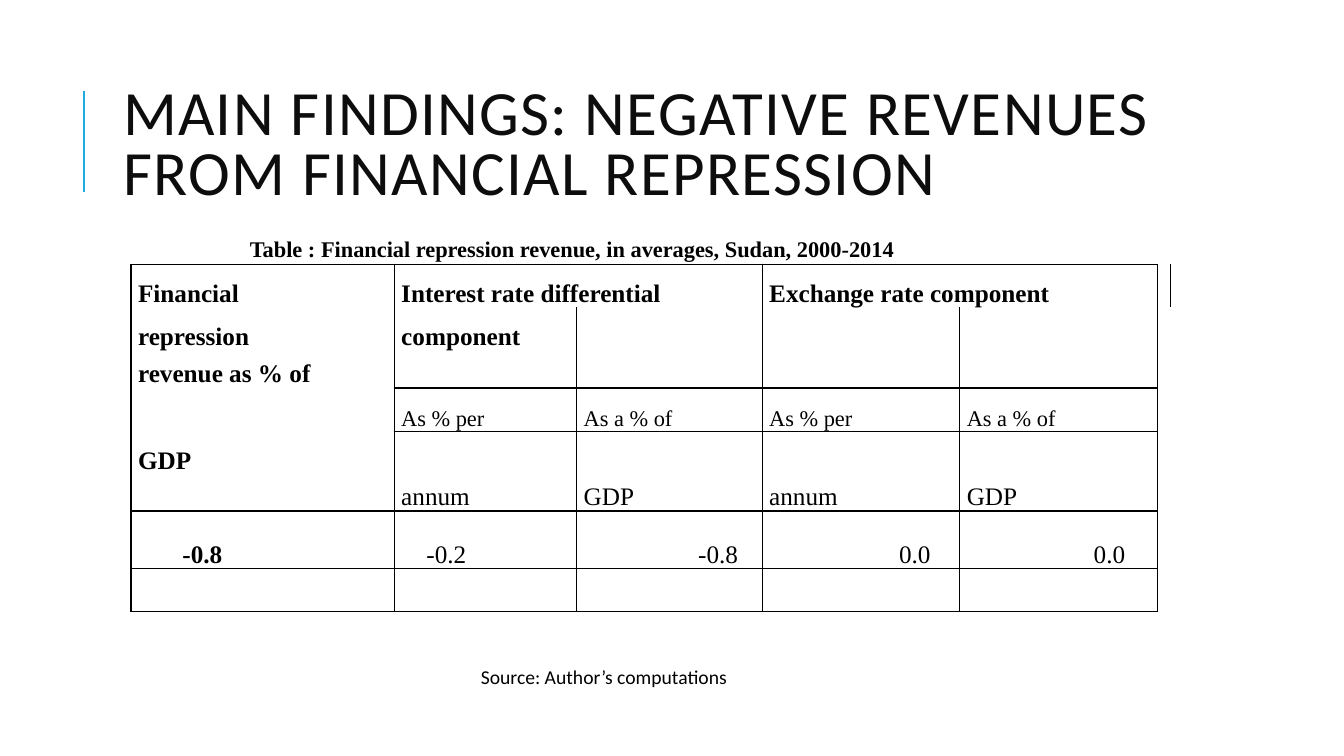
from collections import defaultdict

from lxml.etree import SubElement
from pptx import Presentation
from pptx.dml.color import RGBColor
from pptx.enum.shapes import MSO_CONNECTOR
from pptx.enum.text import MSO_ANCHOR, MSO_AUTO_SIZE, PP_ALIGN
from pptx.oxml import parse_xml
from pptx.oxml.ns import nsdecls, qn
from pptx.util import Pt

SCALE = 9144  # EMU in one px, at 100 px to the inch
NO_GRID_STYLE = "{2D5ABB26-0587-4C30-8999-92F81FD0307C}"
BLACK = "000000"
SERIF = {"name": "Times New Roman", "size": Pt(18)}

COLUMN_WIDTHS = [261, 181, 184, 196, 196, 13]
ROW_HEIGHTS = [43, 43, 37, 43, 43, 36, 57, 43, 43]

# First row, first column, last row, last column
MERGES = [(0, 1, 0, 2), (0, 3, 0, 4), (3, 0, 4, 0), (8, 1, 8, 3)]
MERGES += [(4, column, 5, column) for column in range(1, 5)]
OUTLINES = [(0, 0, 5, 0), (0, 1, 2, 2), (0, 3, 2, 4)]
OUTLINES += [(3, column, 5, column) for column in range(1, 5)]
OUTLINES += [(6, column, 7, column) for column in range(5)]

# Row, column, text, line spacing in points
HEADINGS = [
    (0, 0, "Financial", 11.4),
    (1, 0, "repression", 11.3),
    (2, 0, "revenue as % of", 10.5),
    (3, 0, "GDP", 11.4),
    (0, 1, "Interest rate differential", 11.4),
    (1, 1, "component", 11.3),
    (0, 3, "Exchange rate component", 11.4),
]
SUBHEADINGS = [("As % per", "annum"), ("As a % of", "GDP")] * 2
# Text, alignment, distance from that side of the cell
VALUES = [
    ("-0.8", PP_ALIGN.LEFT, 51),
    ("-0.2", PP_ALIGN.LEFT, 32),
    ("-0.8", PP_ALIGN.RIGHT, 24),
    ("0.0", PP_ALIGN.RIGHT, 29),
    ("0.0", PP_ALIGN.RIGHT, 32),
]


def px(length):
    return length * SCALE


def color(value):
    return RGBColor.from_string(value)


def set_all(target, values):
    for name, value in values.items():
        setattr(target, name, value)


def write(para, text, font, hex_color=BLACK):
    span = para.add_run()
    span.text = text
    set_all(span.font, font)
    span.font.color.rgb = color(hex_color)
    return span


def add_title(slide, box, text):
    """Place the title and the accent rule to its left."""
    left, top, width, height = map(px, box)
    title = slide.shapes.title
    set_all(title, {"left": left, "top": top, "width": width, "height": height})
    set_all(title.text_frame, {
        "word_wrap": True,
        "auto_size": MSO_AUTO_SIZE.NONE,
        "vertical_anchor": MSO_ANCHOR.MIDDLE,
    })
    para = title.text_frame.paragraphs[0]
    set_all(para, {"alignment": PP_ALIGN.LEFT, "line_spacing": 0.8})
    span = write(para, text, {"name": "Calibri", "size": Pt(45)}, "0D0D0D")
    span.font._element.set("spc", "100")

    rule_x = left - px(29)
    rule = slide.shapes.add_connector(
        MSO_CONNECTOR.STRAIGHT, rule_x, top + px(126), rule_x, top + px(26))
    rule.line.color.rgb = color("1CADE4")
    rule.line.width = Pt(1.5)
    SubElement(rule._element.spPr, qn("a:effectLst"))


def add_label(slide, box, text, font):
    label = slide.shapes.add_textbox(*map(px, box))
    label.text_frame.word_wrap = True
    write(label.text_frame.paragraphs[0], text, font)


def fill_cell(cell, text, spacing, font, alignment=PP_ALIGN.LEFT, inset=7):
    para = cell.text_frame.paragraphs[0]
    set_all(para, {"alignment": alignment, "line_spacing": Pt(spacing)})
    side = "margin_right" if alignment == PP_ALIGN.RIGHT else "margin_left"
    setattr(cell, side, px(inset))
    write(para, text, font)


def draw_outlines(table):
    """Line every outlined region, on both sides of each shared edge."""
    edges = defaultdict(set)
    for first_row, first_column, last_row, last_column in OUTLINES:
        for row in range(first_row, last_row + 1):
            edges[row, first_column].add("lnL")
            edges[row, last_column].add("lnR")
            edges[row, last_column + 1].add("lnL")
            if first_column:
                edges[row, first_column - 1].add("lnR")
        for column in range(first_column, last_column + 1):
            edges[first_row, column].add("lnT")
            edges[last_row, column].add("lnB")
            edges[last_row + 1, column].add("lnT")
            if first_row:
                edges[first_row - 1, column].add("lnB")
    for (row, column), names in edges.items():
        properties = table.cell(row, column)._tc.get_or_add_tcPr()
        ordered = [name for name in ("lnL", "lnR", "lnT", "lnB") if name in names]
        for index, name in enumerate(ordered):
            properties.insert(index, parse_xml(
                f'<a:{name} {nsdecls("a")} w="12700"><a:solidFill>'
                f'<a:srgbClr val="{BLACK}"/></a:solidFill></a:{name}>'))


def add_revenue_table(slide, left, top):
    frame = slide.shapes.add_table(
        len(ROW_HEIGHTS), len(COLUMN_WIDTHS), px(left), px(top),
        px(sum(COLUMN_WIDTHS)), px(sum(ROW_HEIGHTS)))
    table = frame.table
    set_all(table, {"first_row": False, "horz_banding": False})
    table._tbl.tblPr.find(qn("a:tableStyleId")).text = NO_GRID_STYLE
    for column, width in zip(table.columns, COLUMN_WIDTHS):
        column.width = px(width)
    for row, height in zip(table.rows, ROW_HEIGHTS):
        row.height = px(height)
    for cell in table.iter_cells():
        cell.fill.background()
        set_all(cell, {
            "margin_left": 0, "margin_right": 0, "margin_top": 0,
            "margin_bottom": 0, "vertical_anchor": MSO_ANCHOR.BOTTOM,
        })
    for first_row, first_column, last_row, last_column in MERGES:
        table.cell(first_row, first_column).merge(table.cell(last_row, last_column))

    for row, column, text, spacing in HEADINGS:
        fill_cell(table.cell(row, column), text, spacing, SERIF | {"bold": True})
    for column, (upper, lower) in enumerate(SUBHEADINGS, 1):
        fill_cell(table.cell(3, column), upper, 8.2, SERIF | {"size": Pt(16)})
        fill_cell(table.cell(4, column), lower, 11.4, SERIF)
    for column, (text, alignment, inset) in enumerate(VALUES):
        font = SERIF | {"bold": column == 0}
        fill_cell(table.cell(6, column), text, 11.4, font, alignment, inset)
    draw_outlines(table)


def main():
    deck = Presentation()
    set_all(deck, {"slide_width": px(1333), "slide_height": px(750)})
    slide = deck.slides.add_slide(deck.slide_layouts.get_by_name("Title Only"))
    add_title(slide, (112, 64, 1063, 164),
              "MAIN FINDINGS: NEGATIVE REVENUES FROM FINANCIAL REPRESSION")
    add_revenue_table(slide, 130, 262)
    add_label(slide, (238, 228, 882, 37),
              "Table : Financial repression revenue, in averages, Sudan, 2000-2014",
              SERIF | {"size": Pt(16), "bold": True})
    add_label(slide, (467, 655, 425, 34), "Source: Author’s computations",
              {"name": "Calibri", "size": Pt(14)})
    deck.save("out.pptx")


if __name__ == "__main__":
    main()
